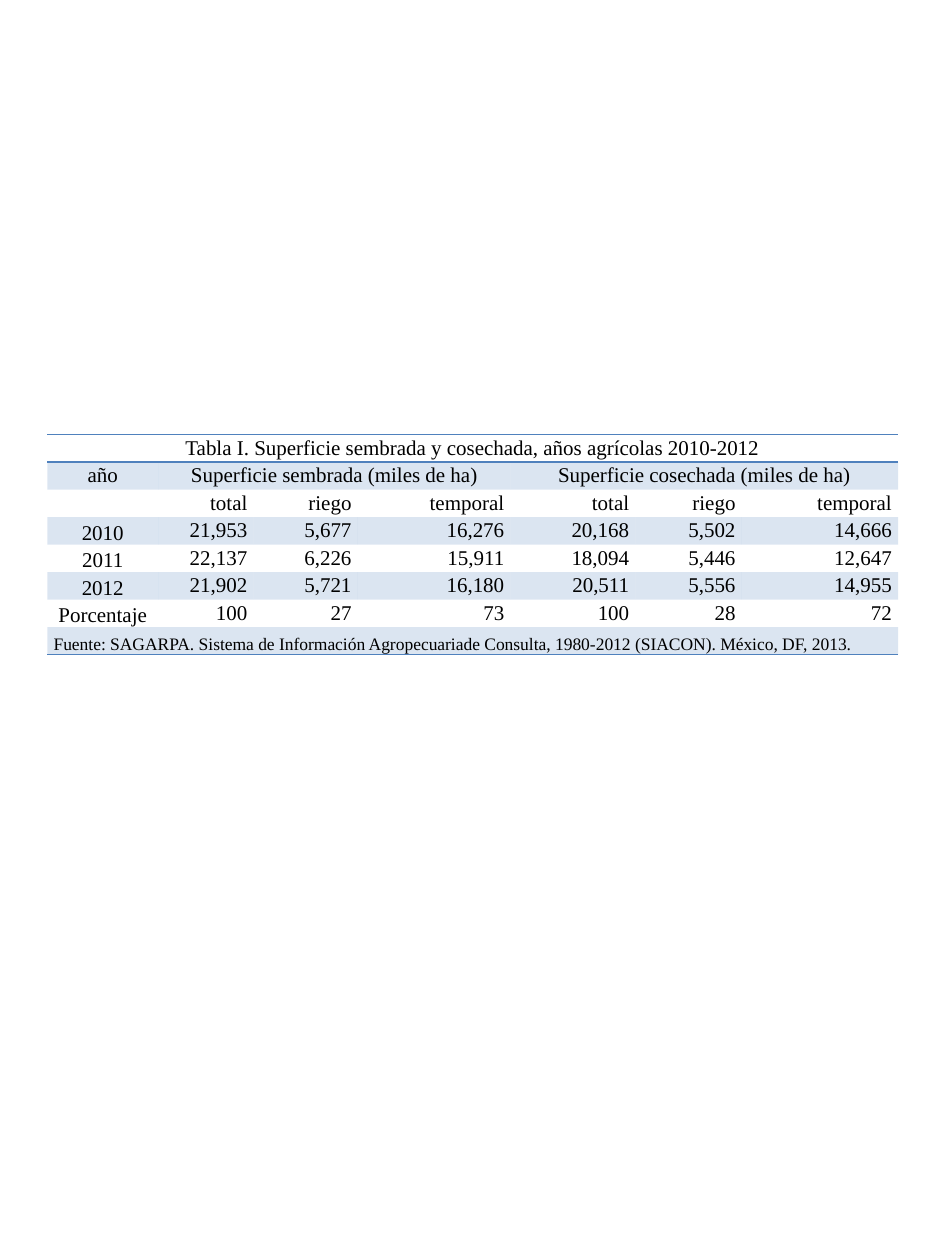
"""Build a slide with a table of sown and harvested farmland, 2010-2012."""
from dataclasses import dataclass

from lxml import etree
from pptx import Presentation
from pptx.dml.color import RGBColor
from pptx.enum.text import MSO_ANCHOR, PP_ALIGN
from pptx.oxml.ns import qn
from pptx.table import Table, _Cell
from pptx.util import Pt

LEFT, CENTER, RIGHT = PP_ALIGN.LEFT, PP_ALIGN.CENTER, PP_ALIGN.RIGHT
MIDDLE, BOTTOM = MSO_ANCHOR.MIDDLE, MSO_ANCHOR.BOTTOM


@dataclass(frozen=True)
class Theme:
    """Hold the colours, font and type sizes."""
    font: str = "Times New Roman"
    ink: str = "000000"
    accent: str = "4F81BD"
    band_alpha: int = 20000
    body_size: float = 12
    source_size: float = 10
    rule_width: float = 1
    table_style: str = "{2D5ABB26-0587-4C30-8999-92F81FD0307C}"


@dataclass(frozen=True)
class Entry:
    """Describe one table cell and the columns it spans."""
    column: int
    text: str
    span: int = 1
    align: PP_ALIGN = RIGHT
    anchor: MSO_ANCHOR = MIDDLE
    size: float = Theme.body_size


THEME = Theme()
TABLE_LEFT, TABLE_TOP, ROW_HEIGHT, SIDE_MARGIN = 27, 248.3, 15.75, 3.6
COLUMN_WIDTHS = (63.4, 54.6, 59.5, 87.3, 71.4, 60.8, 89.3)
COLUMN_COUNT = len(COLUMN_WIDTHS)
TITLE = "Tabla I. Superficie sembrada y cosechada, años agrícolas 2010-2012"
SOURCE = ("Fuente: SAGARPA. Sistema de Información Agropecuariade Consulta, "
          "1980-2012 (SIACON). México, DF, 2013.")
RECORDS = (
    ("", "total", "riego", "temporal", "total", "riego", "temporal"),
    ("2010", "21,953", "5,677", "16,276", "20,168", "5,502", "14,666"),
    ("2011", "22,137", "6,226", "15,911", "18,094", "5,446", "12,647"),
    ("2012", "21,902", "5,721", "16,180", "20,511", "5,556", "14,955"),
    ("Porcentaje", "100", "27", "73", "100", "28", "72"),
)


def record_row(record: tuple[str, ...]) -> list[Entry]:
    """Turn a record into a centred label and right-aligned values."""
    label = Entry(0, record[0], align=CENTER, anchor=BOTTOM)
    return [label] + [Entry(column, text) for column, text in enumerate(record) if column]


def write_text(cell: _Cell, text: str, *, size: float, align: PP_ALIGN,
               anchor: MSO_ANCHOR) -> None:
    """Write formatted text into a cell."""
    cell.vertical_anchor = anchor
    cell.margin_left = cell.margin_right = Pt(SIDE_MARGIN)
    cell.margin_top = cell.margin_bottom = 0
    para = cell.text_frame.paragraphs[0]
    para.alignment = align
    if not text:
        etree.SubElement(para._p, qn("a:endParaRPr"), sz=str(int(size * 100)))
        return
    span = para.add_run()
    span.text = text
    span.font.name = THEME.font
    span.font.size = Pt(size)
    span.font.color.rgb = RGBColor.from_string(THEME.ink)


def paint_cell(cell: _Cell, banded: bool) -> None:
    """Give a cell the translucent band or no fill."""
    if not banded:
        cell.fill.background()
        return
    cell.fill.solid()
    cell.fill.fore_color.rgb = RGBColor.from_string(THEME.accent)
    colour = cell._tc.tcPr.find(f"{qn('a:solidFill')}/{qn('a:srgbClr')}")
    etree.SubElement(colour, qn("a:alpha"), val=str(THEME.band_alpha))


def rule_cell(cell: _Cell, sides: tuple[str, ...]) -> None:
    """Draw accent rules on the named sides of a cell."""
    for position, side in enumerate(sides):
        line = etree.Element(qn(f"a:ln{side}"), w=str(Pt(THEME.rule_width)))
        fill = etree.SubElement(line, qn("a:solidFill"))
        etree.SubElement(fill, qn("a:srgbClr"), val=THEME.accent)
        cell._tc.get_or_add_tcPr().insert(position, line)


def fill_row(table: Table, row: int, entries: list[Entry], sides: tuple[str, ...]) -> None:
    """Write, merge, paint and rule one row."""
    for column in range(COLUMN_COUNT):
        cell = table.cell(row, column)
        paint_cell(cell, banded=row % 2 == 1)
        rule_cell(cell, sides)
    for entry in entries:
        cell = table.cell(row, entry.column)
        if entry.span > 1:
            cell.merge(table.cell(row, entry.column + entry.span - 1))
        write_text(cell, entry.text, size=entry.size, align=entry.align, anchor=entry.anchor)


def main() -> None:
    """Build and save the deck."""
    deck = Presentation()
    deck.slide_width, deck.slide_height = Pt(540), Pt(720)
    page = deck.slides.add_slide(deck.slide_layouts[6])
    rows = [
        [Entry(0, TITLE, span=COLUMN_COUNT, align=CENTER)],
        [Entry(0, "año", align=CENTER),
         Entry(1, "Superficie sembrada (miles de ha)", span=3, align=CENTER),
         Entry(4, "Superficie cosechada (miles de ha)", span=3, align=CENTER)],
        *map(record_row, RECORDS),
        [Entry(0, SOURCE, span=COLUMN_COUNT, align=LEFT, anchor=BOTTOM,
               size=THEME.source_size)],
    ]
    frame = page.shapes.add_table(len(rows), COLUMN_COUNT, Pt(TABLE_LEFT), Pt(TABLE_TOP),
                                  Pt(sum(COLUMN_WIDTHS)), Pt(ROW_HEIGHT * len(rows)))
    table = frame.table
    table.first_row = table.horz_banding = False
    table._tbl.tblPr.find(qn("a:tableStyleId")).text = THEME.table_style
    for column, width in zip(table.columns, COLUMN_WIDTHS):
        column.width = Pt(width)
    rules = {0: ("T", "B"), len(rows) - 1: ("B",)}
    for index, entries in enumerate(rows):
        table.rows[index].height = Pt(ROW_HEIGHT)
        fill_row(table, index, entries, rules.get(index, ()))
    deck.save("out.pptx")


if __name__ == "__main__":
    main()
